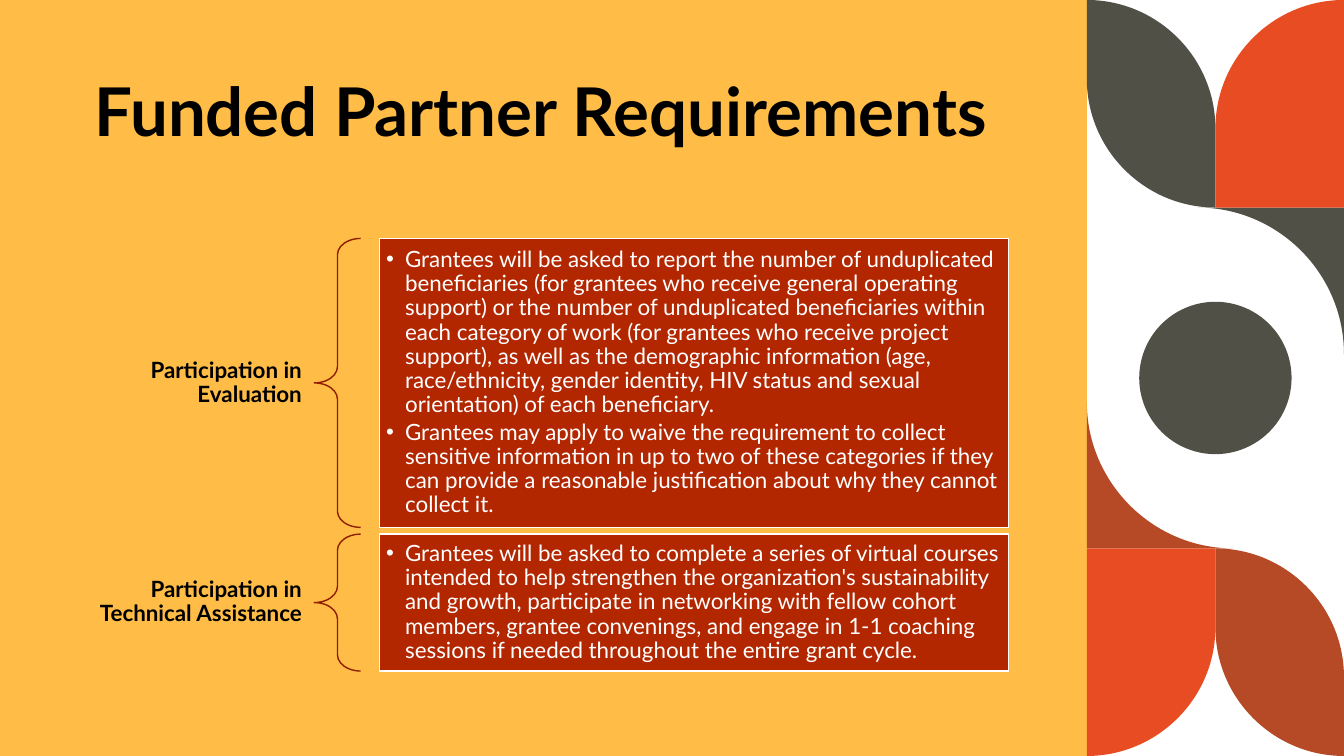
from lxml.etree import SubElement
from pptx import Presentation
from pptx.dml.color import RGBColor
from pptx.enum.shapes import MSO_SHAPE
from pptx.enum.text import MSO_ANCHOR, MSO_AUTO_SIZE, PP_ALIGN
from pptx.oxml.ns import qn
from pptx.util import Cm, Pt

AMBER = RGBColor(0xFF, 0xBD, 0x47)
OLIVE = RGBColor(0x50, 0x50, 0x46)
ORANGE = RGBColor(0xE8, 0x4C, 0x22)
RUST = RGBColor(0xB6, 0x49, 0x26)
BRICK = RGBColor(0xB2, 0x26, 0x00)
DARK_BRICK = RGBColor(0x8F, 0x1E, 0x00)
WHITE = RGBColor(0xFF, 0xFF, 0xFF)
BLACK = RGBColor(0x00, 0x00, 0x00)

FONT = "Lato"
SLIDE_WIDTH, SLIDE_HEIGHT = 33.87, 19.05
PANEL_WIDTH = 27.39

REQUIREMENTS = [
    (6.01, 7.28, "Participation in Evaluation", [
        "Grantees will be asked to report the number of unduplicated beneficiaries "
        "(for grantees who receive general operating support) or the number of "
        "unduplicated beneficiaries within each category of work (for grantees who "
        "receive project support), as well as the demographic information (age, "
        "race/ethnicity, gender identity, HIV status and sexual orientation) of each "
        "beneficiary.",
        "Grantees may apply to waive the requirement to collect sensitive information "
        "in up to two of these categories if they can provide a reasonable "
        "justification about why they cannot collect it.",
    ]),
    (13.46, 3.45, "Participation in Technical Assistance", [
        "Grantees will be asked to complete a series of virtual courses intended to "
        "help strengthen the organization's sustainability and growth, participate in "
        "networking with fellow cohort members, grantee convenings, and engage in 1-1 "
        "coaching sessions if needed throughout the entire grant cycle.",
    ]),
]


def place(shape, left, top, width, height):
    shape.left, shape.top = Cm(left), Cm(top)
    shape.width, shape.height = Cm(width), Cm(height)


def paint(shape, color):
    shape.shadow.inherit = False
    shape.fill.solid()
    shape.fill.fore_color.rgb = color
    shape.line.fill.background()


def set_frame(frame, side, edge):
    """Wrap and centre the text vertically, with side and top/bottom insets in cm."""
    frame.word_wrap = True
    frame.auto_size = MSO_AUTO_SIZE.NONE
    frame.vertical_anchor = MSO_ANCHOR.MIDDLE
    frame.margin_left = frame.margin_right = Cm(side)
    frame.margin_top = frame.margin_bottom = Cm(edge)


def style(para, size, color, bold, align):
    para.alignment = align
    para.line_spacing = 0.9
    para.space_before = Pt(0)
    para.font.name = FONT
    para.font.size = Pt(size)
    para.font.bold = bold
    para.font.color.rgb = color


def set_bullet(para, indent):
    properties = para._p.get_or_add_pPr()
    properties.set("marL", str(Cm(indent)))
    properties.set("indent", str(-Cm(indent)))
    SubElement(properties, qn("a:buFont")).set("typeface", "Arial")
    SubElement(properties, qn("a:buChar")).set("char", "•")


def toward(start, corner, share=0.55):
    return tuple(a + (b - a) * share for a, b in zip(start, corner))


def add_tile(page, steps, color, locate):
    """Draw steps of one point (line) or corner and end (quarter arc); locate maps them to cm."""
    points, curve_starts = list(steps[0]), []
    for step in steps[1:]:
        if len(step) == 2:
            corner, end = step
            curve_starts.append(len(points) - 1)
            points += [toward(points[-1], corner), toward(end, corner)]
        points.append(step[-1])
    corners = [tuple(Cm(value) for value in locate(*point)) for point in points]
    builder = page.shapes.build_freeform(*corners[0])
    builder.add_line_segments(corners[1:], close=True)
    tile = builder.convert_to_shape()
    lines = list(tile._element.iter(qn("a:lnTo")))
    for first in curve_starts:
        curve = lines[first]
        curve.tag = qn("a:cubicBezTo")
        for line in lines[first + 1:first + 3]:
            curve.append(line[0])
            line.getparent().remove(line)
    paint(tile, color)


def add_panel(page):
    panel = page.shapes.add_shape(
        MSO_SHAPE.RECTANGLE, 0, 0, Cm(PANEL_WIDTH), Cm(SLIDE_HEIGHT))
    paint(panel, AMBER)
    page.shapes._spTree.insert(2, panel._element)


def add_pattern(page, left, top, width, height):
    """Three curved tiles, repeated turned by half a circle, around a central dot."""
    half = width / 2
    tile, wedge = 5.23, 3.69
    leaf_steps = [[(0, 0)], [(0, tile - half)], [(0, tile), (half, tile)],
                  [(half, half)], [(half, 0), (0, 0)]]
    wedge_steps = [[(width, tile)], [(width - wedge, tile)],
                   [(width, tile), (width, tile + wedge)]]
    petal_steps = [[(width, 0)], [(width, tile)], [(half, tile)],
                   [(half, half)], [(half, 0), (width, 0)]]

    def upright(x, y):
        return left + x, top + y

    def turned(x, y):
        return left + width - x, top + height - y

    for steps, upper_color, lower_color in [
            (leaf_steps, OLIVE, RUST), (wedge_steps, OLIVE, RUST),
            (petal_steps, ORANGE, ORANGE)]:
        add_tile(page, steps, upper_color, upright)
        add_tile(page, steps, lower_color, turned)

    size = 3.84
    dot = page.shapes.add_shape(
        MSO_SHAPE.OVAL, Cm(left + (width - size) / 2), Cm(top + (height - size) / 2),
        Cm(size), Cm(size))
    paint(dot, OLIVE)


def fill_title(title, left, top, width, height):
    place(title, left, top, width, height)
    title.text = "Funded Partner Requirements"
    set_frame(title.text_frame, 0.25, 0.13)
    title.text_frame.margin_left = 0
    style(title.text_frame.paragraphs[0], 48, BLACK, True, PP_ALIGN.CENTER)


def add_requirement(page, body, label, items, left, top, height):
    """A label, a brace and a filled list box side by side."""
    label_width, label_height, brace_width, gap = 5.82, 1.45, 1.17, 0.47
    brace_left = left + label_width
    body_left = brace_left + brace_width + gap

    box = page.shapes.add_textbox(
        Cm(left), Cm(top + (height - label_height) / 2),
        Cm(label_width), Cm(label_height))
    set_frame(box.text_frame, 0.31, 0.1)
    box.text_frame.text = label
    style(box.text_frame.paragraphs[0], 16, BLACK, True, PP_ALIGN.RIGHT)

    brace = page.shapes.add_shape(
        MSO_SHAPE.LEFT_BRACE, Cm(brace_left), Cm(top), Cm(brace_width), Cm(height))
    brace.shadow.inherit = False
    brace.adjustments[0] = 0.35
    brace.fill.background()
    brace.line.color.rgb = DARK_BRICK
    brace.line.width = Pt(1)

    place(body, body_left, top, 15.85, height)
    body.fill.solid()
    body.fill.fore_color.rgb = BRICK
    body.line.color.rgb = WHITE
    body.line.width = Pt(1)
    set_frame(body.text_frame, 0.17, 0.17)
    body.text_frame.text = "\n".join(items)
    for para in body.text_frame.paragraphs:
        style(para, 16, WHITE, False, PP_ALIGN.LEFT)
        para.space_after = Pt(2.5)
        set_bullet(para, 0.48)


def main():
    deck = Presentation()
    deck.slide_width, deck.slide_height = Cm(SLIDE_WIDTH), Cm(SLIDE_HEIGHT)
    page = deck.slides.add_slide(deck.slide_layouts[3])

    add_panel(page)
    add_pattern(page, PANEL_WIDTH, 0, SLIDE_WIDTH - PANEL_WIDTH, SLIDE_HEIGHT)
    fill_title(page.shapes.title, 2.08, 1.05, 23.34, 3.68)
    for index, (top, height, label, items) in enumerate(REQUIREMENTS, start=1):
        add_requirement(page, page.placeholders[index], label, items, 2.1, top, height)
    deck.save("out.pptx")


if __name__ == "__main__":
    main()
